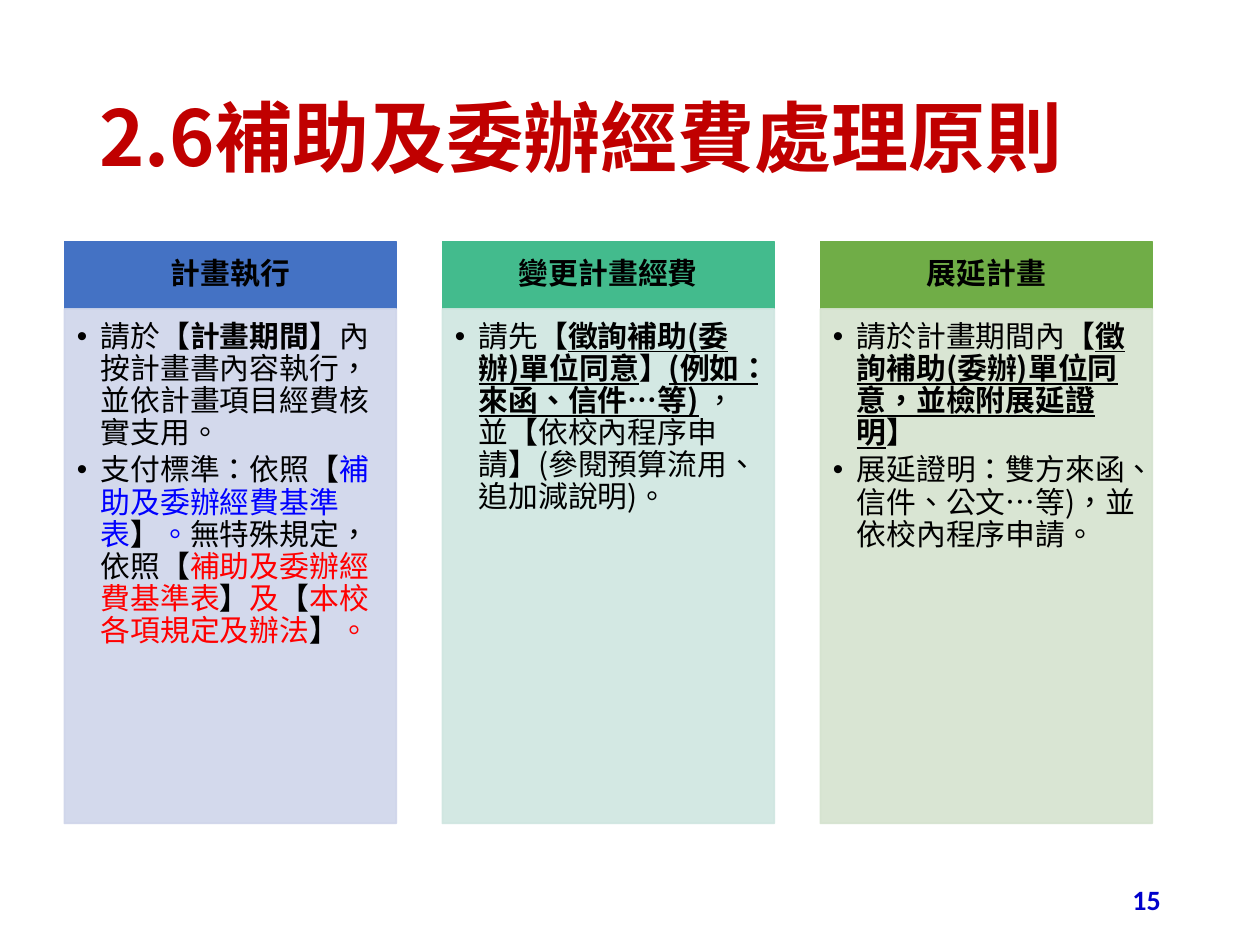
from dataclasses import dataclass

from lxml import etree
from pptx import Presentation
from pptx.dml.color import RGBColor
from pptx.enum.shapes import MSO_SHAPE
from pptx.enum.text import MSO_ANCHOR, PP_ALIGN
from pptx.oxml.ns import qn
from pptx.util import Cm, Pt

RECTANGLE = MSO_SHAPE.RECTANGLE
TOP, MIDDLE = MSO_ANCHOR.TOP, MSO_ANCHOR.MIDDLE
LEFT, CENTER, RIGHT = PP_ALIGN.LEFT, PP_ALIGN.CENTER, PP_ALIGN.RIGHT


@dataclass(frozen=True)
class Theme:
    cjk_font: str = "Noto Sans CJK SC"
    latin_font: str = "Calibri"
    title_size: int = 44
    text_size: int = 17
    number_size: int = 16
    title: str = "C00000"
    text: str = "000000"
    blue: str = "0000FF"
    red: str = "FF0000"
    number: str = "0000CC"
    panel_alpha: int = 90


THEME = Theme()
BOLD = {"bold": True}
BOLD_LINE = {"bold": True, "underline": True}
BLUE = {"color": THEME.blue}
RED = {"color": THEME.red}

# Each column: heading, heading fill, panel fill, bullets made of (text, format) spans
COLUMNS = [
    ("計畫執行", "4472C4", "CFD5EA", [
        [("請於", {}), ("【計畫期間】", BOLD),
         ("內按計畫書內容執行，並依計畫項目經費核實支用。", {})],
        [("支付標準：依照", {}), ("【", BOLD), ("補助及委辦經費基準表", BLUE),
         ("】", BOLD), ("。", BLUE), ("無特殊規定，依照", {}), ("【", BOLD),
         ("補助及委辦經費基準表", RED), ("】", BOLD), ("及", RED), ("【", BOLD),
         ("本校各項規定及辦法", RED), ("】", BOLD), ("。", RED)],
    ]),
    ("變更計畫經費", "43BB8D", "CFE6E0", [
        [("請先", {}), ("【", BOLD), ("徵詢補助(委辦)單位同意", BOLD_LINE),
         ("】", BOLD), ("(例如：來函、信件…等)", BOLD_LINE), (" ", BOLD),
         ("，並", {}), ("【", BOLD), ("依校內程序申請", {}), ("】", BOLD),
         ("(參閱預算流用、追加減說明)。", {})],
    ]),
    ("展延計畫", "70AD47", "D5E3CF", [
        [("請於計畫期間內", {}), ("【", BOLD),
         ("徵詢補助(委辦)單位同意，並檢附展延證明", BOLD_LINE), ("】", BOLD)],
        [("展延證明：雙方來函、信件、公文…等)，並依校內程序申請。", {})],
    ]),
]


def add_span(para, text, size=THEME.text_size, color=THEME.text,
             font=THEME.cjk_font, bold=False, underline=False):
    span = para.add_run()
    span.text = text
    style = span.font
    style.name, style.size = font, Pt(size)
    style.bold, style.underline = bold, underline
    style.color.rgb = RGBColor.from_string(color)
    properties = span._r.get_or_add_rPr()
    properties.set("lang", "zh-TW")
    east_asian = etree.Element(qn("a:ea"), typeface=font)
    properties.find(qn("a:latin")).addnext(east_asian)


def add_bullet(para):
    properties = para._p.get_or_add_pPr()
    properties.set("marL", str(Cm(0.48)))
    properties.set("indent", str(-Cm(0.48)))
    etree.SubElement(properties, qn("a:buFont"), typeface="Arial")
    etree.SubElement(properties, qn("a:buChar"), char="•")


def set_frame(frame, anchor, insets):
    frame.word_wrap = True
    frame.vertical_anchor = anchor
    (frame.margin_left, frame.margin_top,
     frame.margin_right, frame.margin_bottom) = (Cm(inset) for inset in insets)


class SlideBuilder:
    def __init__(self, slide, theme):
        self.slide = slide
        self.theme = theme

    def text(self, text, place, align=LEFT, **style):
        box = self.slide.shapes.add_textbox(*(Cm(length) for length in place))
        set_frame(box.text_frame, MIDDLE, (0.25, 0.13, 0.25, 0.13))
        para = box.text_frame.paragraphs[0]
        para.alignment = align
        para.line_spacing = 0.9
        add_span(para, text, **style)

    def rectangle(self, place, color, alpha=100):
        shape = self.slide.shapes.add_shape(RECTANGLE, *(Cm(length) for length in place))
        shape.shadow.inherit = False
        shape.fill.solid()
        shape.line.width = Pt(1)
        for target in (shape.fill.fore_color, shape.line.color):
            target.rgb = RGBColor.from_string(color)
        if alpha < 100:
            for tone in shape._element.spPr.iter(qn("a:srgbClr")):
                etree.SubElement(tone, qn("a:alpha"), val=str(alpha * 1000))
        return shape.text_frame

    def heading(self, text, place, color):
        frame = self.rectangle(place, color)
        set_frame(frame, MIDDLE, (0.33, 0.2, 0.33, 0.2))
        para = frame.paragraphs[0]
        para.alignment = CENTER
        para.line_spacing = 0.9
        add_span(para, text, bold=True)

    def panel(self, bullets, place, color):
        frame = self.rectangle(place, color, self.theme.panel_alpha)
        set_frame(frame, TOP, (0.25, 0.25, 0.33, 0.38))
        for index, spans in enumerate(bullets):
            para = frame.add_paragraph() if index else frame.paragraphs[0]
            add_bullet(para)
            para.alignment = LEFT
            para.line_spacing = 0.9
            para.space_after = Pt(3)
            for text, style in spans:
                add_span(para, text, **style)


def main():
    deck = Presentation()
    deck.slide_width, deck.slide_height = Cm(25.4), Cm(19.05)
    page = SlideBuilder(deck.slides.add_slide(deck.slide_layouts[6]), THEME)

    page.text("2.6補助及委辦經費處理原則", (1.75, 1.01, 21.9, 3.68),
              size=THEME.title_size, color=THEME.title, bold=True)

    first_left, pitch, width = 1.3, 7.62, 6.69
    top, heading_height, panel_height = 4.87, 1.36, 10.37
    for index, (title, heading_color, panel_color, bullets) in enumerate(COLUMNS):
        left = first_left + index * pitch
        page.heading(title, (left, top, width, heading_height), heading_color)
        page.panel(bullets, (left, top + heading_height, width, panel_height), panel_color)

    page.text("15", (17.93, 17.66, 5.72, 1.01), align=RIGHT, font=THEME.latin_font,
              size=THEME.number_size, color=THEME.number, bold=True)
    deck.save("out.pptx")


if __name__ == "__main__":
    main()
